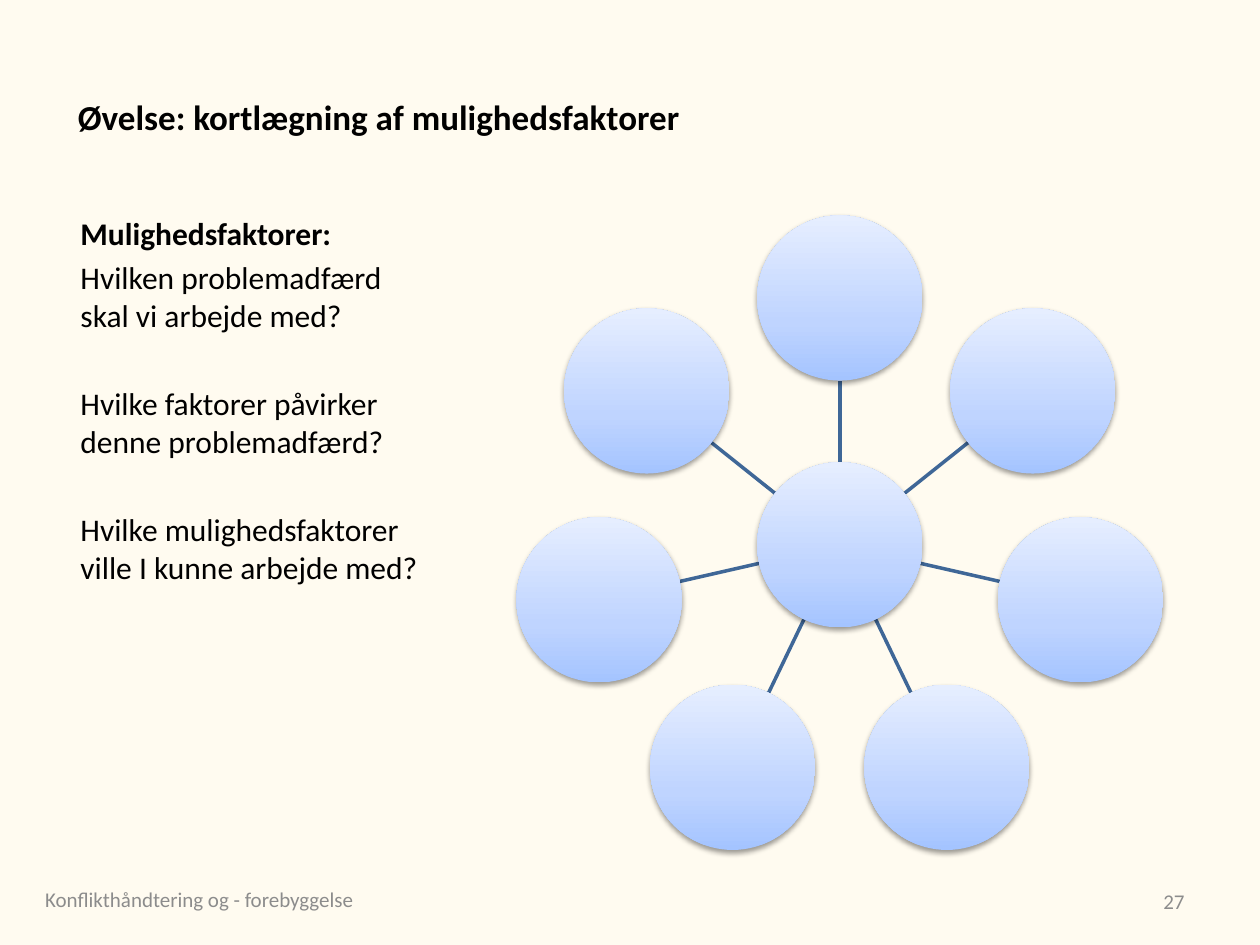
"""Build a slide with a wheel of seven empty circles around a hub."""
import math

from pptx import Presentation
from pptx import util as u
from pptx.dml.color import RGBColor
from pptx.enum import shapes, text
from pptx.oxml import parse_xml
from pptx.oxml.ns import nsdecls

CENTER_X, CENTER_Y = 479.9, 311.4
RADIUS = 47.2
ORBIT = 141.1
SATELLITES = 7
GRADIENT = [(0, "A4C4FF"), (35, "BFD4FF"), (100, "E6EEFF")]


def color(value):
    return RGBColor.from_string(value)


presentation = Presentation()
presentation.slide_width = u.Pt(720)
presentation.slide_height = u.Pt(540)
slide = presentation.slides.add_slide(presentation.slide_layouts[6])
slide.background.fill.solid()
slide.background.fill.fore_color.rgb = color("FFFBF0")

middle, top = text.MSO_ANCHOR.MIDDLE, text.MSO_ANCHOR.TOP
left, right = text.PP_ALIGN.LEFT, text.PP_ALIGN.RIGHT
questions = [
    ("Mulighedsfaktorer:", True, 0),
    ("Hvilken problemadfærd skal vi arbejde med?", False, 3.6),
    ("Hvilke faktorer påvirker denne problemadfærd?", False, 28.8),
    ("Hvilke mulighedsfaktorer ville I kunne arbejde med?", False, 28.8),
]
text_boxes = [
    ((18.7, 499.7, 228.2, 28.8), middle, left, 12, "8C8C8C",
     [("Konflikthåndtering og - forebyggelse", False, 0)]),
    ((37.4, 21.6, 648, 90), middle, left, 20, "000000",
     [("Øvelse: kortlægning af mulighedsfaktorer", True, 0)]),
    ((38.9, 118.8, 210.2, 362.2), top, left, 18, "000000", questions),
    ((516.2, 500.4, 167.8, 28.8), middle, right, 12, "8C8C8C", [("27", False, 0)]),
]
for box, anchor, alignment, size, font_color, lines in text_boxes:
    text_frame = slide.shapes.add_textbox(*map(u.Pt, box)).text_frame
    text_frame.word_wrap = True
    text_frame.vertical_anchor = anchor
    text_frame.text = "\n".join(line for line, _, _ in lines)
    for paragraph, (_, bold, space_before) in zip(text_frame.paragraphs, lines):
        paragraph.alignment = alignment
        paragraph.space_before = u.Pt(space_before)
        font = paragraph.runs[0].font
        font.name = "Calibri"
        font.size = u.Pt(size)
        font.bold = bold
        font.color.rgb = color(font_color)

circle_centers = [(CENTER_X, CENTER_Y)]
for index in range(SATELLITES):
    angle = 2 * math.pi * index / SATELLITES
    direction_x, direction_y = math.sin(angle), -math.cos(angle)
    circle_centers.append((CENTER_X + ORBIT * direction_x, CENTER_Y + ORBIT * direction_y))
    spoke_ends = [
        u.Pt(coordinate)
        for distance in (RADIUS, ORBIT - RADIUS)
        for coordinate in (CENTER_X + distance * direction_x, CENTER_Y + distance * direction_y)
    ]
    spoke = slide.shapes.add_connector(shapes.MSO_CONNECTOR.STRAIGHT, *spoke_ends)
    spoke.line.color.rgb = color("3F6797")
    spoke.line.width = u.Pt(2)
    spoke._element.spPr.append(parse_xml(f"<a:effectLst {nsdecls('a')}/>"))

stops = "".join(
    f'<a:gs pos="{position * 1000}"><a:srgbClr val="{value}"/></a:gs>'
    for position, value in GRADIENT
)
for x, y in circle_centers:
    circle = slide.shapes.add_shape(
        shapes.MSO_SHAPE.OVAL, u.Pt(x - RADIUS), u.Pt(y - RADIUS), u.Pt(2 * RADIUS), u.Pt(2 * RADIUS))
    properties = circle._element.spPr
    properties.append(parse_xml(
        f'<a:gradFill {nsdecls("a")} rotWithShape="1"><a:gsLst>{stops}</a:gsLst>'
        '<a:lin ang="16200000" scaled="0"/></a:gradFill>'))
    circle.line.fill.background()
    properties.append(parse_xml(
        f'<a:effectLst {nsdecls("a")}><a:outerShdw blurRad="{u.Pt(3.1)}" dist="{u.Pt(1.6)}"'
        ' dir="5400000" rotWithShape="0"><a:srgbClr val="000000"><a:alpha val="38000"/>'
        '</a:srgbClr></a:outerShdw></a:effectLst>'))

presentation.save("out.pptx")
